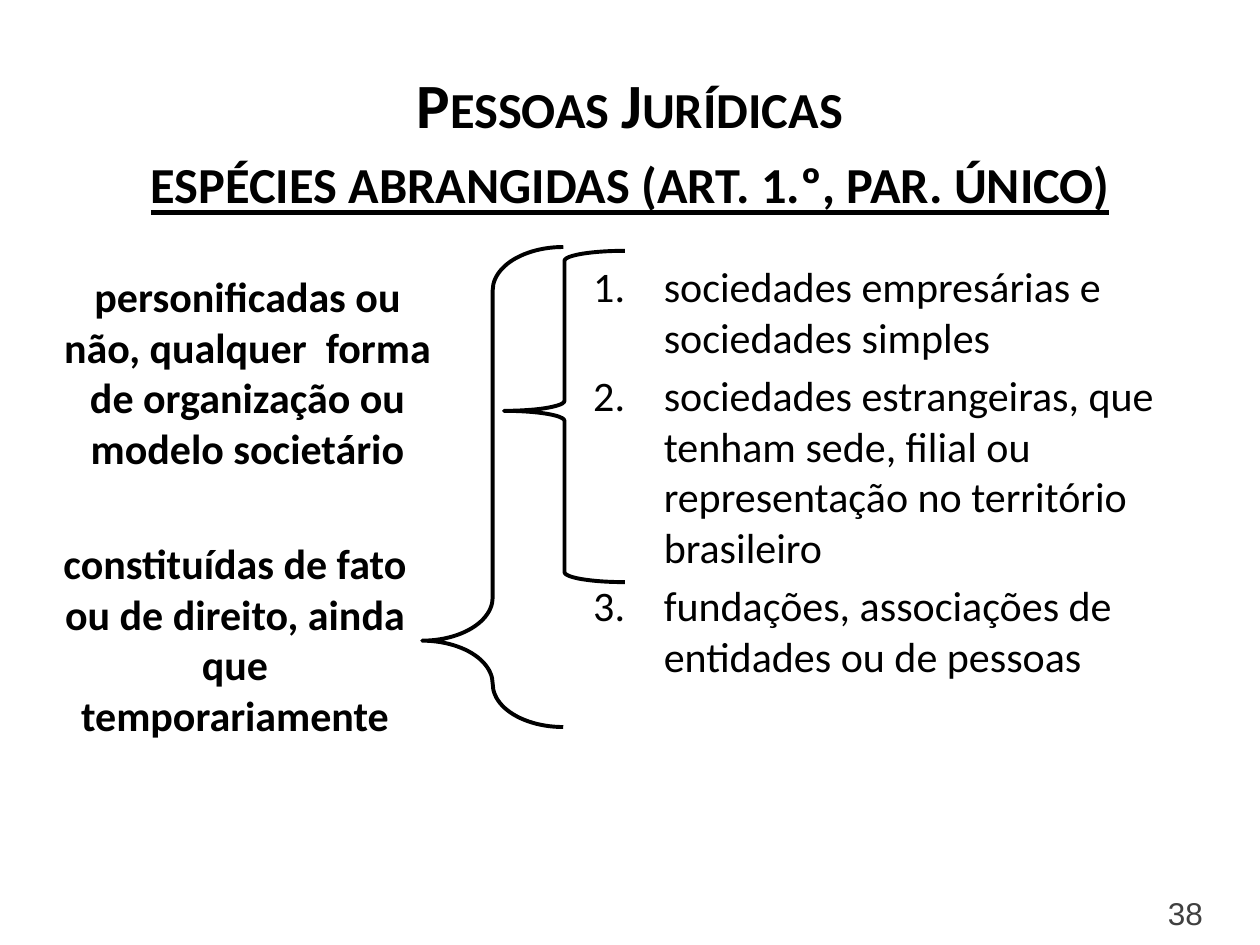
from lxml.etree import SubElement
from pptx import Presentation
from pptx.dml.color import RGBColor
from pptx.enum.shapes import MSO_SHAPE
from pptx.enum.text import PP_ALIGN
from pptx.oxml.ns import qn
from pptx.util import Inches, Pt

BLACK = "000000"
GREY = "404040"


def color(hex_code):
    return RGBColor.from_string(hex_code)


def add_text_box(slide, left, top, width, height, wrap=True):
    box = slide.shapes.add_textbox(Inches(left), Inches(top), Inches(width), Inches(height))
    box.text_frame.word_wrap = wrap
    return box.text_frame


def add_run(paragraph, text, size=24, font="Calibri", hex_code=BLACK, bold=False):
    run = paragraph.add_run()
    run.text = text
    run.font.size = Pt(size)
    run.font.name = font
    run.font.bold = bold
    run.font.color.rgb = color(hex_code)
    return run


def add_title(slide, heading, subheading):
    """Two centred lines in small capitals, the second underlined."""
    frame = add_text_box(slide, 0, 0.47, 10, 1.3)
    for text, underlined in ((heading, False), (subheading, True)):
        paragraph = frame.add_paragraph() if underlined else frame.paragraphs[0]
        paragraph.alignment = PP_ALIGN.CENTER
        run = add_run(paragraph, text, size=36, bold=True)
        run.font.underline = underlined
        run.font._element.set("cap", "small")


def add_numbered_list(slide, items):
    frame = add_text_box(slide, 4.61, 2.02, 5.28, 3.62)
    for index, item in enumerate(items):
        paragraph = frame.add_paragraph() if index else frame.paragraphs[0]
        properties = paragraph._p.get_or_add_pPr()
        properties.set("marL", str(Inches(0.56)))
        properties.set("indent", str(-Inches(0.56)))
        SubElement(properties, qn("a:buFont"), typeface="+mj-lt")
        SubElement(properties, qn("a:buAutoNum"), type="arabicPeriod")
        if index:
            paragraph.space_before = Pt(4.8)
        add_run(paragraph, item)


def add_side_note(slide, text, left, top, width, height):
    paragraph = add_text_box(slide, left, top, width, height).paragraphs[0]
    paragraph.alignment = PP_ALIGN.CENTER
    add_run(paragraph, text, bold=True)


def add_left_pointing_brace(slide, left, top, width, height, curve, point):
    brace = slide.shapes.add_shape(
        MSO_SHAPE.RIGHT_BRACE, Inches(left), Inches(top), Inches(width), Inches(height))
    brace.rotation = 180
    brace.adjustments[0] = curve
    brace.adjustments[1] = point
    brace.shadow.inherit = False
    brace.fill.background()
    brace.line.color.rgb = color(BLACK)
    brace.line.width = Pt(2.25)


def add_page_number(slide, number):
    frame = add_text_box(slide, 9.17, 7.05, 0.48, 0.4, wrap=False)
    add_run(frame.paragraphs[0], number, size=18, font="Arial", hex_code=GREY)


def main():
    presentation = Presentation()
    presentation.slide_width = Inches(10)
    presentation.slide_height = Inches(7.5)
    slide = presentation.slides.add_slide(presentation.slide_layouts[6])

    add_title(slide, "Pessoas Jurídicas", "espécies abrangidas (art. 1.º, par. único)")
    add_numbered_list(slide, [
        "sociedades empresárias e sociedades simples",
        "sociedades estrangeiras, que tenham sede, filial ou representação "
        "no território brasileiro",
        "fundações, associações de entidades ou de pessoas",
    ])
    add_left_pointing_brace(slide, 4, 1.99, 0.96, 2.63, curve=0.083, point=0.517)
    add_side_note(
        slide, "personificadas ou não, qualquer  forma de organização ou modelo societário",
        0.35, 2.1, 3.23, 2.12)
    add_side_note(
        slide, "constituídas de fato ou de direito, ainda que temporariamente",
        0.34, 4.22, 3.05, 1.72)
    add_left_pointing_brace(slide, 3.35, 1.96, 1.12, 3.81, curve=0.396, point=0.18)
    add_page_number(slide, "38")

    presentation.save("out.pptx")


if __name__ == "__main__":
    main()
